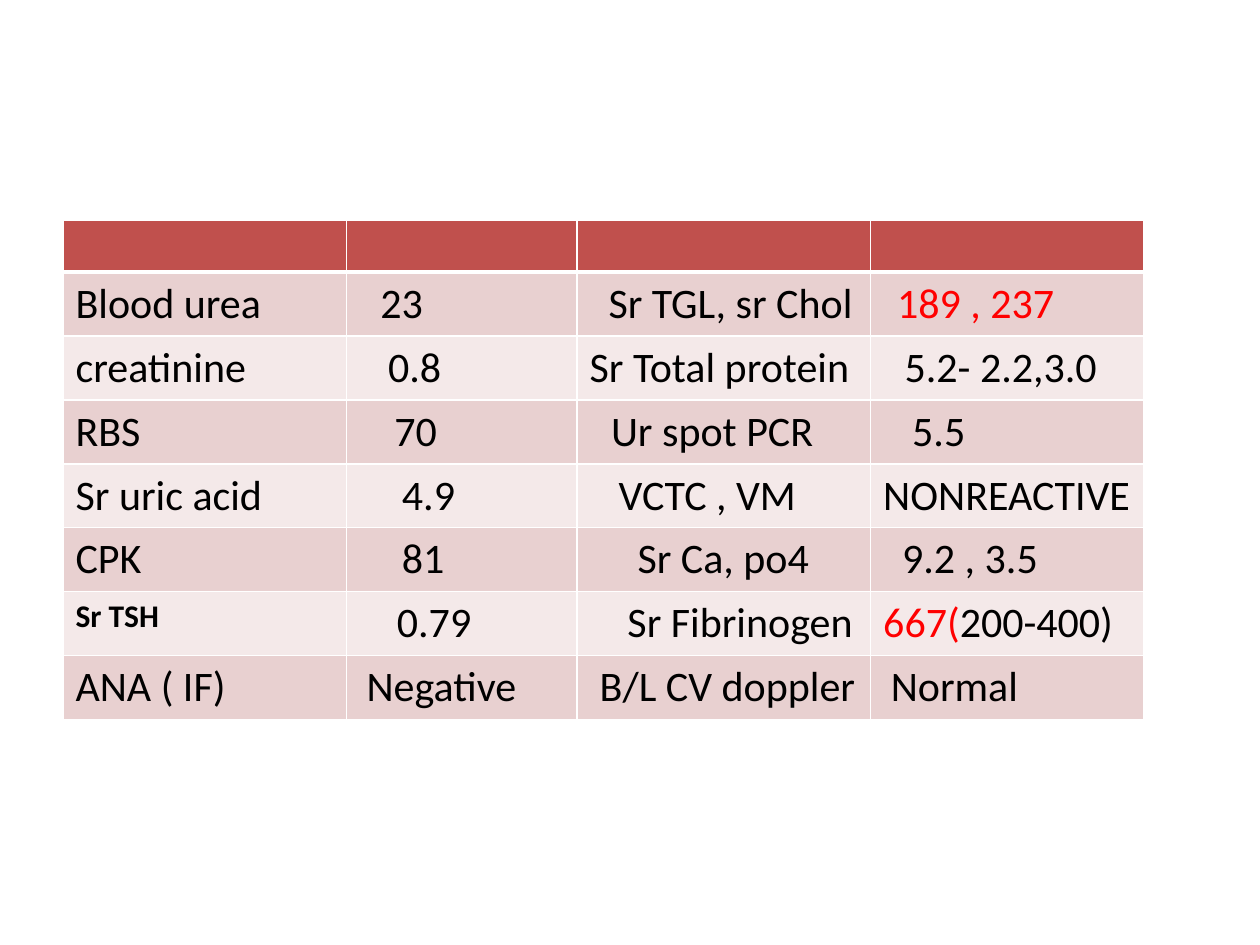
from lxml import etree
from pptx import Presentation
from pptx import util as u
from pptx.dml.color import RGBColor
from pptx.oxml.ns import qn

COLOURS = {"header": "C0504D", "odd": "E8D0D0", "even": "F4E9E9",
           "rule": "FFFFFF", "text": "000000", "abnormal": "FF0000"}
FONT = "Calibri"
BODY_SIZE, SMALL_SIZE = 24, 18
CELL_MARGIN = 0.1
COLUMNS = (2.25, 1.83, 2.33, 2.17)
HEADER_HEIGHT, ROW_HEIGHT = 0.41, 0.5

# Each cell: indent in inches, then its runs as (text, colour)
RESULTS = [
    [(0, "Blood urea"), (0.17, "23"), (0.15, "Sr TGL, sr Chol"), (0.11, ("189 , 237", "abnormal"))],
    [(0, "creatinine"), (0.23, "0.8"), (0, "Sr Total protein"), (0.17, "5.2- 2.2,3.0")],
    [(0, "RBS"), (0.28, "70"), (0.17, "Ur spot PCR"), (0.23, "5.5")],
    [(0, "Sr uric acid"), (0.34, "4.9"), (0.23, "VCTC , VM"), (0, "NONREACTIVE")],
    [(0, "CPK"), (0.34, "81"), (0.38, "Sr Ca, po4"), (0.15, "9.2 , 3.5")],
    [(0, "Sr TSH"), (0.3, "0.79"), (0.3, "Sr Fibrinogen"),
     (0, ("667(", "abnormal"), "200-400)")],
    [(0, "ANA ( IF)"), (0.06, "Negative"), (0.08, "B/L CV doppler"), (0.06, "Normal")],
]
SMALL_BOLD = {"Sr TSH"}


def colour(name):
    return RGBColor.from_string(COLOURS[name])


def set_borders(cell, top=1, bottom=1):
    properties = cell._tc.get_or_add_tcPr()
    for side, points in (("L", 1), ("R", 1), ("T", top), ("B", bottom)):
        line = etree.SubElement(properties, qn(f"a:ln{side}"), w=str(u.Pt(points)))
        fill = etree.SubElement(line, qn("a:solidFill"))
        etree.SubElement(fill, qn("a:srgbClr"), val=COLOURS["rule"])


def paint(cell, name):
    cell.fill.solid()
    cell.fill.fore_color.rgb = colour(name)


def write(cell, indent, *runs):
    cell.margin_left = u.Inches(CELL_MARGIN + indent)
    para = cell.text_frame.paragraphs[0]
    for run in runs:
        words, name = (run, "text") if isinstance(run, str) else run
        small = words in SMALL_BOLD
        span = para.add_run()
        span.text = words
        span.font.name = FONT
        span.font.size = u.Pt(SMALL_SIZE if small else BODY_SIZE)
        span.font.bold = small
        span.font.color.rgb = colour(name)


def add_results_table(page, left, top):
    height = HEADER_HEIGHT + ROW_HEIGHT * len(RESULTS)
    table = page.shapes.add_table(len(RESULTS) + 1, len(COLUMNS), left, top,
                                  u.Inches(sum(COLUMNS)), u.Inches(height)).table
    for column, width in zip(table.columns, COLUMNS):
        column.width = u.Inches(width)
    for index, row in enumerate(table.rows):
        row.height = u.Inches(ROW_HEIGHT if index else HEADER_HEIGHT)

    # Empty header band with a heavy rule below
    for cell in table.rows[0].cells:
        set_borders(cell, bottom=3)
        paint(cell, "header")
        cell.text_frame.paragraphs[0].font.size = u.Pt(SMALL_SIZE)

    # Banded results
    for index, results in enumerate(RESULTS, 1):
        for cell, content in zip(table.rows[index].cells, results):
            set_borders(cell, top=3 if index == 1 else 1)
            paint(cell, "odd" if index % 2 else "even")
            write(cell, *content)


def main():
    deck = Presentation()
    deck.slide_width, deck.slide_height = u.Inches(10), u.Inches(7.5)
    page = deck.slides.add_slide(deck.slide_layouts.get_by_name("Blank"))
    add_results_table(page, u.Inches(0.5), u.Inches(1.75))
    deck.save("out.pptx")


if __name__ == "__main__":
    main()
